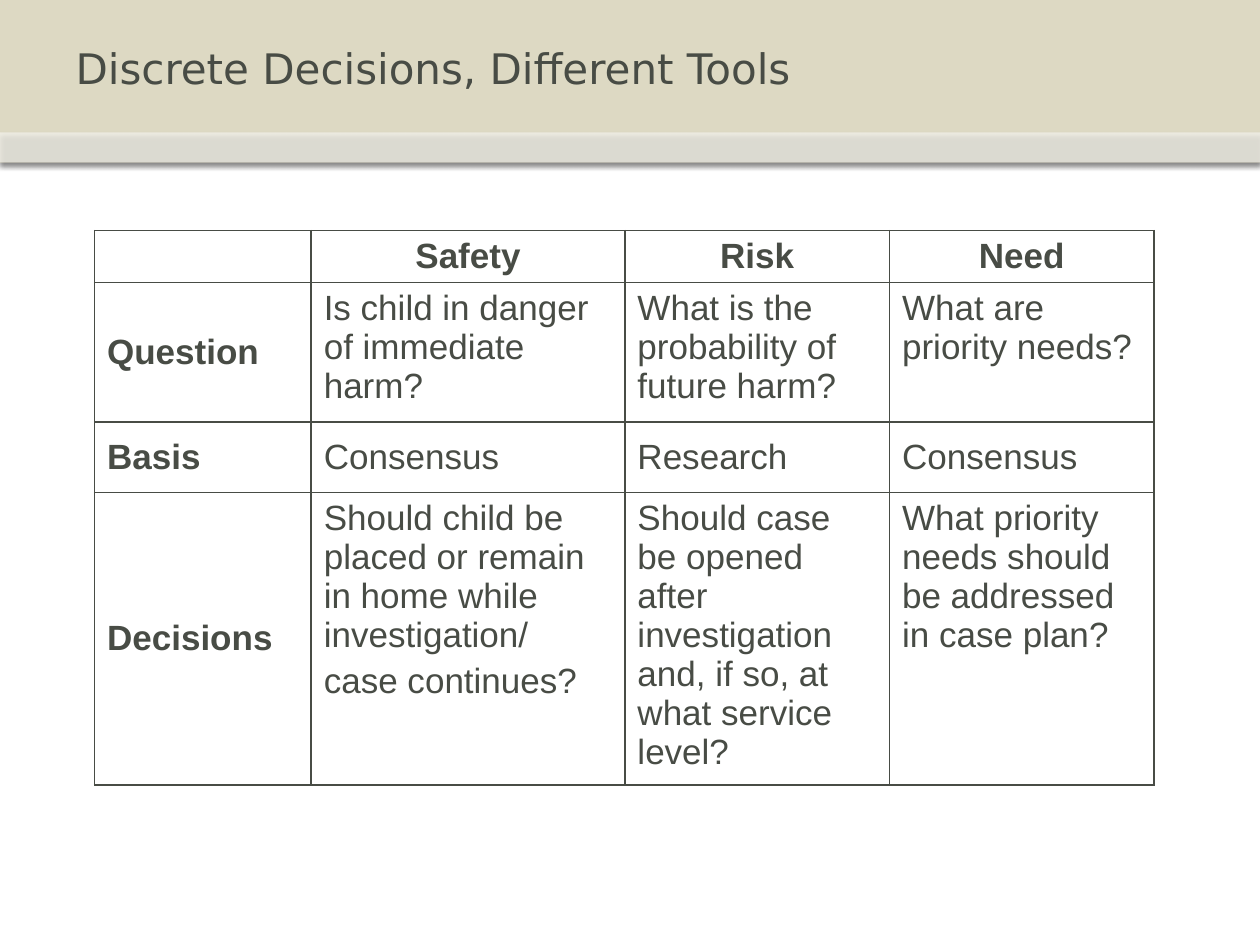
from lxml.etree import SubElement
from pptx import Presentation
from pptx.dml.color import RGBColor
from pptx.enum.shapes import MSO_SHAPE
from pptx.enum.text import MSO_ANCHOR, PP_ALIGN
from pptx.oxml.ns import qn
from pptx.util import Inches, Pt


def color(hex_value):
    return RGBColor.from_string(hex_value)


class DecisionSlide:
    INK, BAND, PAPER = "484C45", "DDD9C3", "FFFFFF"
    TITLE_FONT, BODY_FONT = "DejaVu Sans", "Arial"
    TITLE_SIZE, BODY_SIZE = Pt(24), Pt(20)

    def __init__(self, presentation):
        self.width = presentation.slide_width
        self.height = presentation.slide_height
        self.slide = presentation.slides.add_slide(presentation.slide_layouts[5])

    def place(self, left, top, width, height):
        """Turn shares of the slide's size into lengths."""
        return (int(left * self.width), int(top * self.height),
                int(width * self.width), int(height * self.height))

    def style(self, paragraph, font_name, size, bold=False):
        for run in paragraph.runs:
            font = run.font
            font.name, font.size, font.bold = font_name, size, bold
            font.color.rgb = color(self.INK)

    def title(self, text, *shares):
        title = self.slide.shapes.title
        title.left, title.top, title.width, title.height = self.place(*shares)
        frame = title.text_frame
        frame.text = text
        frame.vertical_anchor = MSO_ANCHOR.MIDDLE
        frame.paragraphs[0].alignment = PP_ALIGN.LEFT
        self.style(frame.paragraphs[0], self.TITLE_FONT, self.TITLE_SIZE)

    def band(self, fill, *shares, opacity=100):
        """Add a shadowed band behind the title."""
        band = self.slide.shapes.add_shape(MSO_SHAPE.RECTANGLE, *self.place(*shares))
        band.fill.solid()
        band.fill.fore_color.rgb = color(fill)
        band.line.fill.background()
        band.shadow.inherit = False
        properties = band.element.spPr
        if opacity < 100:
            fill_color = properties.find(".//" + qn("a:srgbClr"))
            SubElement(fill_color, qn("a:alpha"), val=str(opacity * 1000))
        shadow = SubElement(properties.find(qn("a:effectLst")), qn("a:outerShdw"),
                            blurRad=str(Pt(3.1)), dist=str(Pt(1.8)),
                            dir="5400000", rotWithShape="0")
        shadow_color = SubElement(shadow, qn("a:srgbClr"), val="000000")
        SubElement(shadow_color, qn("a:alpha"), val="35000")
        self.slide.shapes.title.element.addprevious(band.element)

    def borders(self, cell):
        properties = cell._tc.get_or_add_tcPr()
        for position, side in enumerate(("a:lnL", "a:lnR", "a:lnT", "a:lnB")):
            line = properties.makeelement(qn(side), {"w": str(Pt(1))})
            SubElement(SubElement(line, qn("a:solidFill")), qn("a:srgbClr"), val=self.INK)
            properties.insert(position, line)

    def cell(self, cell, text, header, label, middle):
        cell.fill.solid()
        cell.fill.fore_color.rgb = color(self.PAPER)
        self.borders(cell)
        cell.vertical_anchor = MSO_ANCHOR.MIDDLE if middle else MSO_ANCHOR.TOP
        cell.text_frame.text = text
        for number, paragraph in enumerate(cell.text_frame.paragraphs):
            paragraph.alignment = PP_ALIGN.CENTER if header else PP_ALIGN.LEFT
            paragraph.space_before = Pt(4 if number else 0)
            self.style(paragraph, self.BODY_FONT, self.BODY_SIZE, header or label)

    def table(self, rows, widths, heights, left, top, middle_rows):
        frame = self.slide.shapes.add_table(
            len(rows), len(widths),
            *self.place(left, top, sum(widths) / 10, sum(heights) / 7.5))
        table = frame.table
        table.first_row = table.horz_banding = False
        for column, width in zip(table.columns, widths):
            column.width = Inches(width)
        for row, height in zip(table.rows, heights):
            row.height = Inches(height)
        for r, texts in enumerate(rows):
            for c, text in enumerate(texts):
                header, label = r == 0, c == 0
                middle = not header and (label or r in middle_rows)
                self.cell(table.cell(r, c), text, header, label, middle)


def main():
    presentation = Presentation()
    presentation.slide_width, presentation.slide_height = Inches(10), Inches(7.5)
    slide = DecisionSlide(presentation)

    # Header bands and title
    band_bottom, strip_top = 1.29 / 7.5, 0.14
    slide.band(slide.BAND, 0, 0, 1, band_bottom)
    slide.band(slide.PAPER, 0, strip_top, 1, band_bottom - strip_top, opacity=53)
    slide.title("Discrete Decisions, Different Tools", 0.05, 0, 0.85, 1.08 / 7.5)

    # Comparison of the three kinds of decision
    rows = [
        ("", "Safety", "Risk", "Need"),
        ("Question", "Is child in danger of immediate harm?",
         "What is the probability of future harm?", "What are priority needs?"),
        ("Basis", "Consensus", "Research", "Consensus"),
        ("Decisions",
         "Should child be placed or remain in home while investigation/\ncase continues?",
         "Should case be opened after investigation and, if so, at what service level?",
         "What priority needs should be addressed in case plan?"),
    ]
    slide.table(rows, widths=(1.72, 2.49, 2.1, 2.1), heights=(0.4, 1.11, 0.56, 2.32),
                left=0.075, top=1.83 / 7.5, middle_rows={2})

    presentation.save("out.pptx")


if __name__ == "__main__":
    main()
